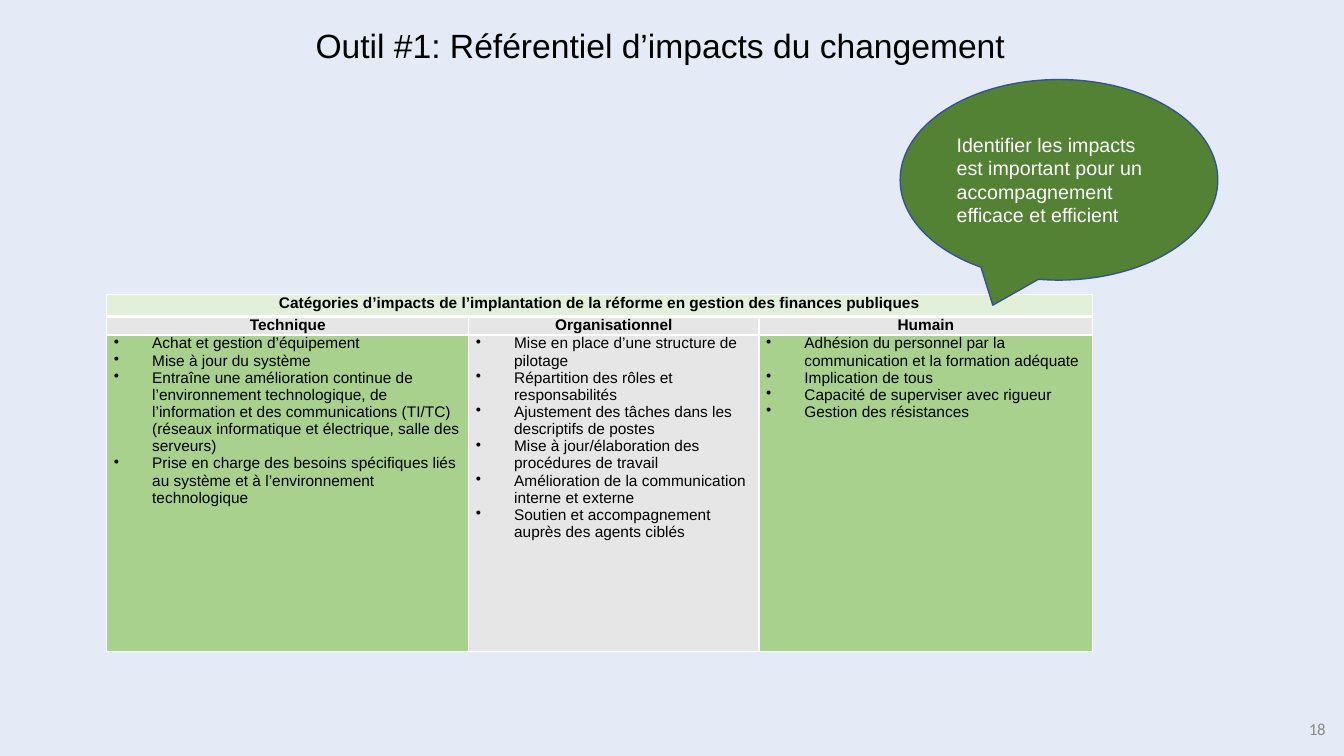
from dataclasses import dataclass

import pptx
import pptx.dml.color
import pptx.enum.shapes
import pptx.enum.text
import pptx.oxml.ns
import pptx.util
from lxml import etree

ALIGN = pptx.enum.text.PP_ALIGN
ANCHOR = pptx.enum.text.MSO_ANCHOR


@dataclass(frozen=True)
class Theme:
    background: str = "E4EAF6"
    ink: str = "000000"
    white: str = "FFFFFF"
    muted: str = "898989"
    pale_green: str = "E2F0D9"
    light_green: str = "A9D18E"
    dark_green: str = "548235"
    grey: str = "E7E6E6"
    outline: str = "325491"
    font: str = "Arial"
    number_font: str = "Calibri"
    title_size: float = 24
    callout_size: float = 14
    number_size: float = 12
    table_size: float = 11


@dataclass(frozen=True)
class Area:
    """Place on a grid of 100 columns by 100 rows covering the slide."""
    column: float
    row: float
    columns: float
    rows: float


@dataclass(frozen=True)
class Category:
    name: str
    columns: float
    fill: str
    impacts: tuple[str, ...]


THEME = Theme()
WIDTH, HEIGHT = pptx.util.Inches(13.33), pptx.util.Inches(7.5)

TITLE_AREA = Area(22.73, 2.67, 54.53, 6.67)
CALLOUT_AREA = Area(66.98, 10.53, 23.63, 26.53)
NUMBER_AREA = Area(93.15, 94.4, 6.23, 5.33)
TABLE_AREA = Area(7.95, 38.93, 73.36, 47.1)
TABLE_ROWS = (2.93, 2.3, 41.87)

CATEGORIES = (
    Category("Technique", 26.93, THEME.light_green, (
        "Achat et gestion d’équipement",
        "Mise à jour du système",
        "Entraîne une amélioration continue de l’environnement technologique, de "
        "l’information et des communications (TI/TC) (réseaux informatique et "
        "électrique, salle des serveurs)",
        "Prise en charge des besoins spécifiques liés au système et à "
        "l’environnement technologique",
    )),
    Category("Organisationnel", 21.6, THEME.grey, (
        "Mise en place d’une structure de pilotage",
        "Répartition des rôles et responsabilités",
        "Ajustement des tâches dans les descriptifs de postes",
        "Mise à jour/élaboration des procédures de travail",
        "Amélioration de la communication interne et externe",
        "Soutien et accompagnement auprès des agents ciblés",
    )),
    Category("Humain", 24.83, THEME.light_green, (
        "Adhésion du personnel par la communication et la formation adéquate",
        "Implication de tous",
        "Capacité de superviser avec rigueur",
        "Gestion des résistances",
    )),
)


def across(columns: float) -> int:
    return round(WIDTH * columns / 100)


def down(rows: float) -> int:
    return round(HEIGHT * rows / 100)


def box(area: Area) -> tuple[int, int, int, int]:
    return across(area.column), down(area.row), across(area.columns), down(area.rows)


def rgb(colour: str) -> pptx.dml.color.RGBColor:
    return pptx.dml.color.RGBColor.from_string(colour)


def add_bullet(paragraph) -> None:
    properties = paragraph._p.get_or_add_pPr()
    indent = pptx.util.Inches(0.38)
    properties.set("marL", str(indent))
    properties.set("indent", str(-indent))
    bullet = etree.SubElement(properties, pptx.oxml.ns.qn("a:buChar"))
    bullet.set("char", "•")


def write(frame, *lines: str, size: float, colour: str = THEME.ink, font: str = THEME.font,
          bold: bool = False, align=ALIGN.LEFT, anchor=ANCHOR.TOP, bulleted: bool = False) -> None:
    frame.word_wrap = True
    frame.vertical_anchor = anchor
    for index, line in enumerate(lines):
        paragraph = frame.add_paragraph() if index else frame.paragraphs[0]
        paragraph.alignment = align
        paragraph.line_spacing = 1.0
        if bulleted:
            add_bullet(paragraph)
        run = paragraph.add_run()
        run.text = line
        run.font.size = pptx.util.Pt(size)
        run.font.name = font
        run.font.bold = bold
        run.font.color.rgb = rgb(colour)


def style_cell(cell, fill: str, top: float = 1, bottom: float = 1) -> None:
    cell.margin_left = cell.margin_right = pptx.util.Inches(0.07)
    cell.margin_top = cell.margin_bottom = 0
    properties = cell._tc.get_or_add_tcPr()
    for side, points in (("L", 1), ("R", 1), ("T", top), ("B", bottom)):
        border = etree.SubElement(properties, pptx.oxml.ns.qn(f"a:ln{side}"))
        border.set("w", str(pptx.util.Pt(points)))
        solid = etree.SubElement(border, pptx.oxml.ns.qn("a:solidFill"))
        etree.SubElement(solid, pptx.oxml.ns.qn("a:srgbClr")).set("val", THEME.white)
    cell.fill.solid()
    cell.fill.fore_color.rgb = rgb(fill)


def add_title(slide) -> None:
    title = slide.shapes.title
    title.left, title.top, title.width, title.height = box(TITLE_AREA)
    title.text_frame.auto_size = pptx.enum.text.MSO_AUTO_SIZE.NONE
    write(title.text_frame, "Outil #1: Référentiel d’impacts du changement", size=THEME.title_size)


def add_impact_table(slide) -> None:
    table = slide.shapes.add_table(len(TABLE_ROWS), len(CATEGORIES), *box(TABLE_AREA)).table
    table.first_row = table.horz_banding = False
    for row, height in zip(table.rows, TABLE_ROWS):
        row.height = down(height)

    # Heading across all categories
    heading = table.cell(0, 0)
    heading.merge(table.cell(0, len(CATEGORIES) - 1))
    write(heading.text_frame,
          "Catégories d’impacts de l’implantation de la réforme en gestion des finances publiques",
          size=THEME.table_size, bold=True, align=ALIGN.CENTER)

    # One column per category
    for index, category in enumerate(CATEGORIES):
        table.columns[index].width = across(category.columns)
        top, name, impacts = (table.cell(row, index) for row in range(len(TABLE_ROWS)))
        style_cell(top, THEME.pale_green, bottom=3)
        style_cell(name, THEME.grey, top=3)
        style_cell(impacts, category.fill)
        write(name.text_frame, category.name, size=THEME.table_size, bold=True,
              align=ALIGN.CENTER)
        write(impacts.text_frame, *category.impacts, size=THEME.table_size, bulleted=True)


def add_callout(slide) -> None:
    callout = slide.shapes.add_shape(
        pptx.enum.shapes.MSO_SHAPE.OVAL_CALLOUT, *box(CALLOUT_AREA))
    callout.shadow.inherit = False
    callout.fill.solid()
    callout.fill.fore_color.rgb = rgb(THEME.dark_green)
    callout.line.color.rgb = rgb(THEME.outline)
    callout.line.width = pptx.util.Pt(1)
    write(callout.text_frame,
          "Identifier les impacts est important pour un accompagnement efficace et efficient",
          size=THEME.callout_size, colour=THEME.white, anchor=ANCHOR.MIDDLE)


def add_page_number(slide) -> None:
    number = slide.shapes.add_textbox(*box(NUMBER_AREA))
    write(number.text_frame, "18", size=THEME.number_size, colour=THEME.muted,
          font=THEME.number_font, align=ALIGN.RIGHT)


def main() -> None:
    deck = pptx.Presentation()
    deck.slide_width, deck.slide_height = WIDTH, HEIGHT
    slide = deck.slides.add_slide(deck.slide_layouts.get_by_name("Title Only"))
    slide.background.fill.solid()
    slide.background.fill.fore_color.rgb = rgb(THEME.background)
    add_page_number(slide)
    add_title(slide)
    add_impact_table(slide)
    add_callout(slide)
    deck.save("out.pptx")


if __name__ == "__main__":
    main()
